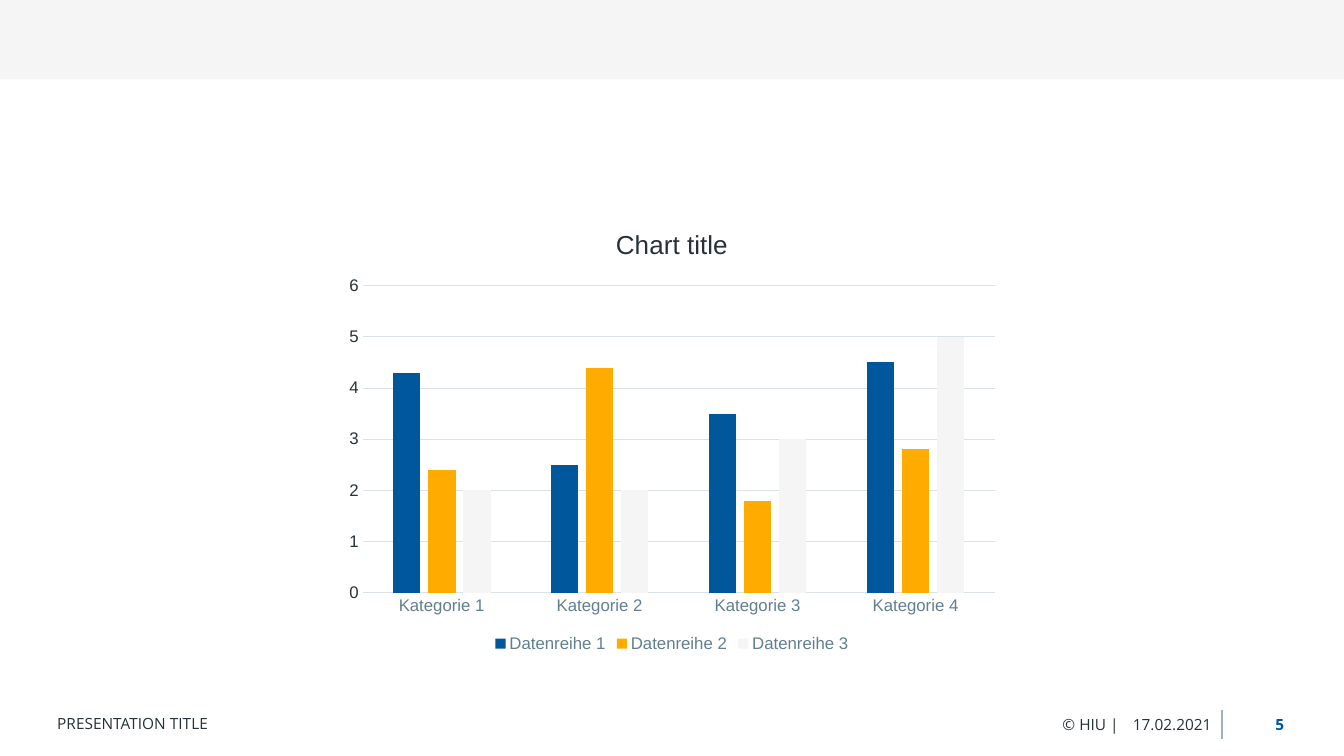
"""Build a slide with a clustered column chart, a header band and a footer."""
from lxml import etree
from pptx import Presentation
from pptx.chart.data import CategoryChartData
from pptx.dml.color import RGBColor
from pptx.enum.chart import XL_CHART_TYPE, XL_LEGEND_POSITION, XL_TICK_MARK
from pptx.enum.shapes import MSO_CONNECTOR, MSO_SHAPE
from pptx.enum.text import MSO_ANCHOR, PP_ALIGN
from pptx.oxml.ns import qn
from pptx.util import Pt

COLUMNS = XL_CHART_TYPE.COLUMN_CLUSTERED
BOTTOM = XL_LEGEND_POSITION.BOTTOM
NO_TICK = XL_TICK_MARK.NONE
STRAIGHT = MSO_CONNECTOR.STRAIGHT
RECTANGLE = MSO_SHAPE.RECTANGLE
TOP, MIDDLE = MSO_ANCHOR.TOP, MSO_ANCHOR.MIDDLE
LEFT, RIGHT = PP_ALIGN.LEFT, PP_ALIGN.RIGHT

BLUE, AMBER, PALE = "01579B", "FFAB00", "F5F5F5"
INK, SLATE, GRID, DIVIDER = "263238", "617F8F", "DAE2E6", "9CB1BC"


def color(value):
    return RGBColor.from_string(value)


def style_font(font, name, size, value, bold=False):
    font.name = name
    font.size = Pt(size)
    font.bold = bold
    font.color.rgb = color(value)


deck = Presentation()
deck.slide_width, deck.slide_height = Pt(960), Pt(540)
page = deck.slides.add_slide(deck.slide_layouts[6])

band = page.shapes.add_shape(RECTANGLE, Pt(0), Pt(0), Pt(960), Pt(56.7))
band.shadow.inherit = False
band.fill.solid()
band.fill.fore_color.rgb = color(PALE)
band.line.fill.background()

divider = page.shapes.add_connector(STRAIGHT, Pt(873.2), Pt(507), Pt(873.2), Pt(528))
divider.line.color.rgb = color(DIVIDER)
divider.line.width = Pt(1.5)
etree.SubElement(divider.element.spPr, qn("a:effectLst"))

footer = [
    ("5", 875.5, 510.5, 41.8, 11.5, 0, TOP, RIGHT, BLUE, True),
    (" © HIU |", 737.3, 510.5, 61.9, 11.5, 0, TOP, RIGHT, INK, False),
    ("17.02.2021", 774.7, 509.8, 97.9, 15.1, 7.2, MIDDLE, RIGHT, INK, False),
    ("PRESENTATION TITLE", 33.8, 509, 324, 15.1, 7.2, MIDDLE, LEFT, INK, False),
]
for text, left, top, width, height, side, anchor, align, ink, bold in footer:
    box = page.shapes.add_textbox(Pt(left), Pt(top), Pt(width), Pt(height))
    frame = box.text_frame
    frame.word_wrap = True
    frame.margin_left = frame.margin_right = Pt(side)
    frame.margin_top = frame.margin_bottom = Pt(side / 2)
    frame.vertical_anchor = anchor
    frame.text = text
    para = frame.paragraphs[0]
    para.alignment = align
    style_font(para.runs[0].font, "Open Sans", 11, ink, bold)

series_values = [
    ("Datenreihe 1", (4.3, 2.5, 3.5, 4.5), BLUE),
    ("Datenreihe 2", (2.4, 4.4, 1.8, 2.8), AMBER),
    ("Datenreihe 3", (2, 2, 3, 5), PALE),
]
data = CategoryChartData()
data.categories = [f"Kategorie {number}" for number in range(1, 5)]
for name, values, fill in series_values:
    data.add_series(name, values)

chart = page.shapes.add_chart(
    COLUMNS, Pt(240), Pt(149), Pt(480), Pt(320), data
).chart
style_font(chart.font, "Arial", 10, INK)
chart.has_title = True
title = chart.chart_title.text_frame
title.text = "Chart title"
style_font(title.paragraphs[0].runs[0].font, "Arial", 18.6, INK)
chart.chart_title.include_in_layout = False

chart.has_legend = True
chart.legend.position = BOTTOM
chart.legend.include_in_layout = False
style_font(chart.legend.font, "Arial", 12, SLATE)

plot = chart.plots[0]
plot.vary_by_categories = False
plot.gap_width = 219
plot.overlap = -27
for series, (name, values, fill) in zip(plot.series, series_values):
    series.format.fill.solid()
    series.format.fill.fore_color.rgb = color(fill)

categories, scale = chart.category_axis, chart.value_axis
for axis, ink in ((categories, SLATE), (scale, INK)):
    axis.major_tick_mark = axis.minor_tick_mark = NO_TICK
    style_font(axis.tick_labels.font, "Arial", 12, ink)
scale.format.line.fill.background()
scale.minimum_scale, scale.maximum_scale, scale.major_unit = 0, 6, 1
scale.has_major_gridlines = True
for line in (categories.format.line, scale.major_gridlines.format.line):
    line.color.rgb = color(GRID)
    line.width = Pt(0.75)

deck.save("out.pptx")
